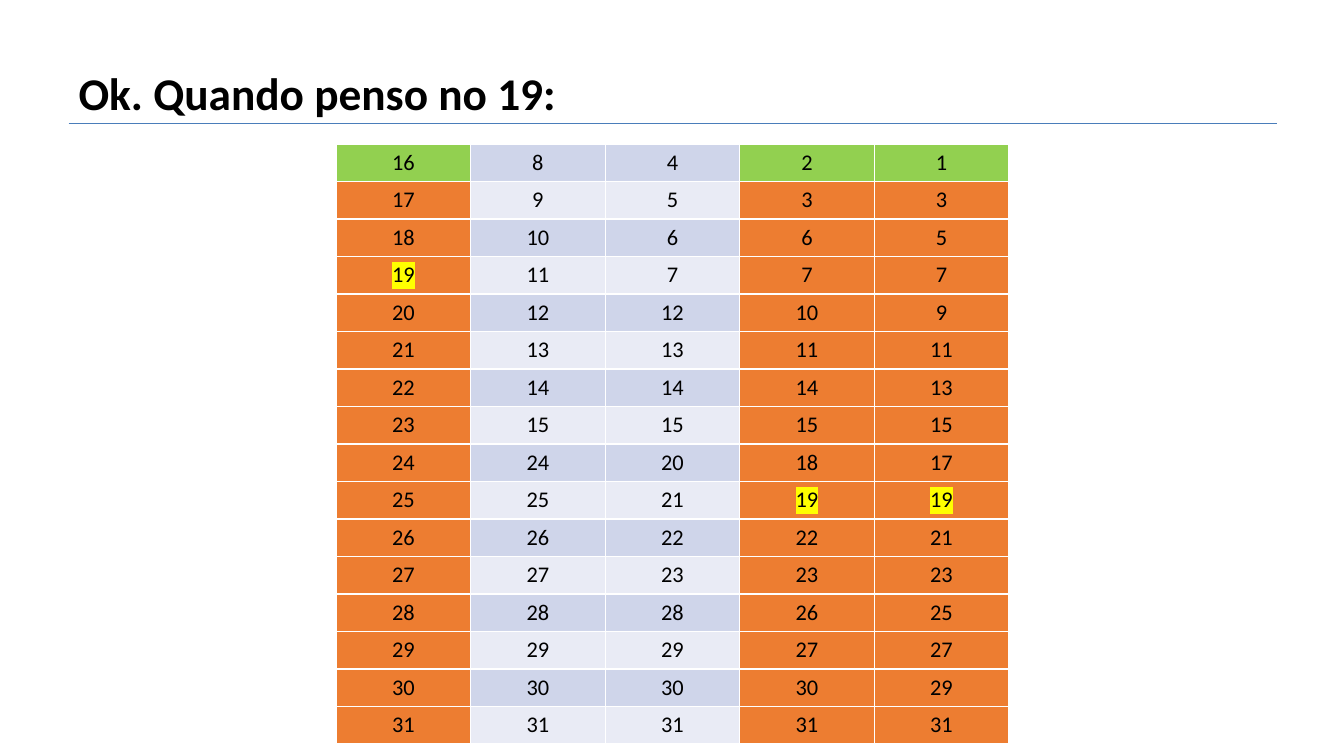
from lxml import etree
from pptx import Presentation
from pptx import util as u
from pptx.dml.color import RGBColor
from pptx.enum import shapes, text
from pptx.oxml import ns

BLACK = RGBColor(0x00, 0x00, 0x00)
WHITE = RGBColor(0xFF, 0xFF, 0xFF)
RULE_BLUE = RGBColor(0x4A, 0x7D, 0xBA)
GREEN = RGBColor(0x92, 0xD0, 0x50)
ORANGE = RGBColor(0xED, 0x7D, 0x31)
BANDS = (RGBColor(0xCF, 0xD5, 0xEA), RGBColor(0xE9, 0xEB, 0xF5))
YELLOW = RGBColor(0xFF, 0xFF, 0x00)

SECRET = 19
POWERS = (16, 8, 4, 2, 1)
COLUMN_WIDTH = u.Cm(3.39)
ROW_HEIGHT = u.Cm(0.85)


def write_text(frame, words, size, bold=False, align=text.PP_ALIGN.LEFT,
               spacing=1.0, highlight=None):
    paragraph = frame.paragraphs[0]
    paragraph.alignment = align
    paragraph.line_spacing = spacing
    run = paragraph.add_run()
    run.text = words
    run.font.name = "Calibri"
    run.font.size = u.Pt(size)
    run.font.bold = bold
    run.font.color.rgb = BLACK
    if highlight is not None:
        mark = etree.Element(ns.qn("a:highlight"))
        etree.SubElement(mark, ns.qn("a:srgbClr"), val=str(highlight))
        run.font.fill
        run._r.rPr.find(ns.qn("a:solidFill")).addnext(mark)


def add_title(slide, words):
    title = slide.shapes.title
    title.left, title.top = u.Cm(1.73), u.Cm(1.52)
    title.width, title.height = u.Cm(30.43), u.Cm(1.8)
    frame = title.text_frame
    frame.vertical_anchor = text.MSO_ANCHOR.MIDDLE
    frame.auto_size = text.MSO_AUTO_SIZE.NONE
    frame.margin_left = frame.margin_right = u.Cm(0.25)
    frame.margin_top = frame.margin_bottom = u.Cm(0.25)
    write_text(frame, words, 32.4, bold=True, spacing=0.9)


def add_rule(slide, left, right, top):
    rule = slide.shapes.add_connector(
        shapes.MSO_CONNECTOR.STRAIGHT, left, top, right, top)
    rule.line.color.rgb = RULE_BLUE
    rule.line.width = u.Pt(0.75)
    etree.SubElement(rule._element.spPr, ns.qn("a:effectLst"))


def set_borders(cell, color, width):
    properties = cell._tc.get_or_add_tcPr()
    for position, side in enumerate(("lnL", "lnR", "lnT", "lnB")):
        border = etree.Element(ns.qn(f"a:{side}"), w=str(width))
        fill = etree.SubElement(border, ns.qn("a:solidFill"))
        etree.SubElement(fill, ns.qn("a:srgbClr"), val=str(color))
        properties.insert(position, border)


def cell_color(power, row):
    if SECRET & power:
        return GREEN if row == 0 else ORANGE
    return BANDS[row % 2]


def add_cards(slide, left, top):
    cards = [[n for n in range(1, 32) if n & power] for power in POWERS]
    row_count = len(cards[0])
    table = slide.shapes.add_table(
        row_count, len(POWERS), left, top,
        COLUMN_WIDTH * len(POWERS), ROW_HEIGHT * row_count).table
    table.first_row = table.horz_banding = False
    for column in table.columns:
        column.width = COLUMN_WIDTH
    for row in table.rows:
        row.height = ROW_HEIGHT
    for column, (power, numbers) in enumerate(zip(POWERS, cards)):
        for row, number in enumerate(numbers):
            cell = table.cell(row, column)
            cell.fill.solid()
            cell.fill.fore_color.rgb = cell_color(power, row)
            set_borders(cell, WHITE, u.Pt(1))
            write_text(cell.text_frame, str(number), 16,
                       align=text.PP_ALIGN.CENTER,
                       highlight=YELLOW if number == SECRET else None)


def main():
    presentation = Presentation()
    presentation.slide_width = u.Cm(33.87)
    presentation.slide_height = u.Cm(19.05)
    slide = presentation.slides.add_slide(presentation.slide_layouts[5])
    add_rule(slide, u.Cm(1.73), u.Cm(32.18), u.Cm(3.12))
    add_title(slide, f"Ok. Quando penso no {SECRET}:")
    add_cards(slide, u.Cm(8.47), u.Cm(3.63))
    presentation.save("out.pptx")


if __name__ == "__main__":
    main()
